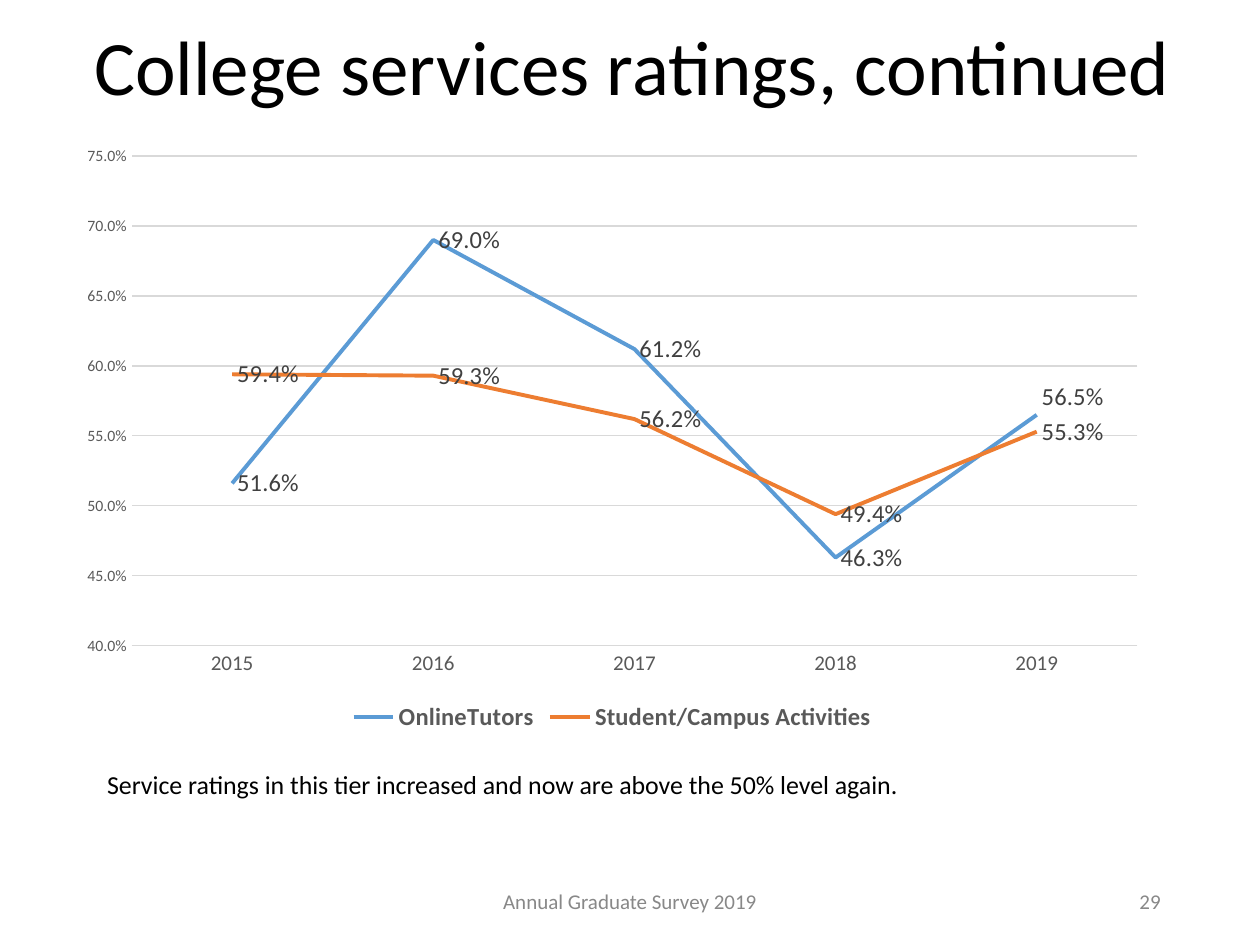
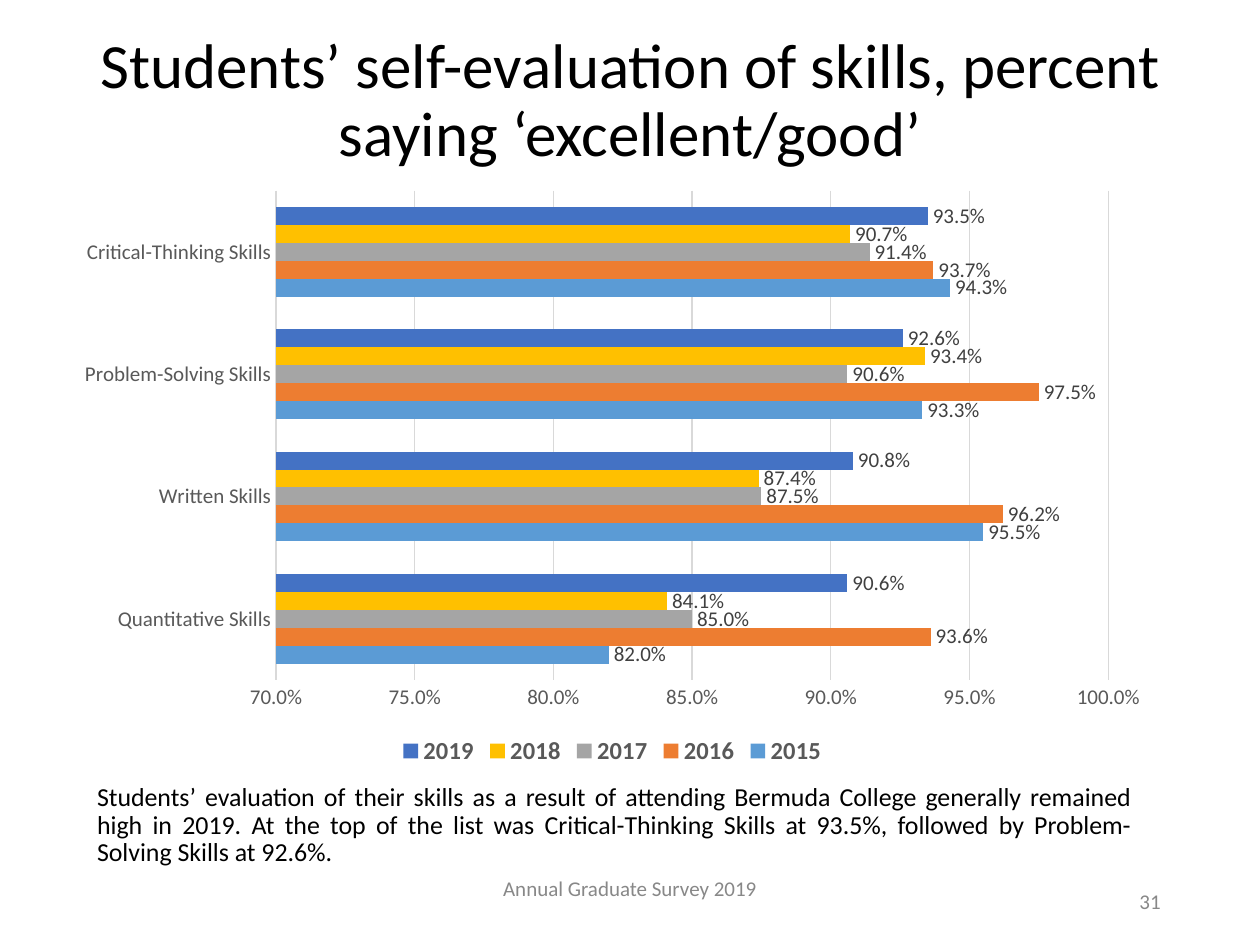
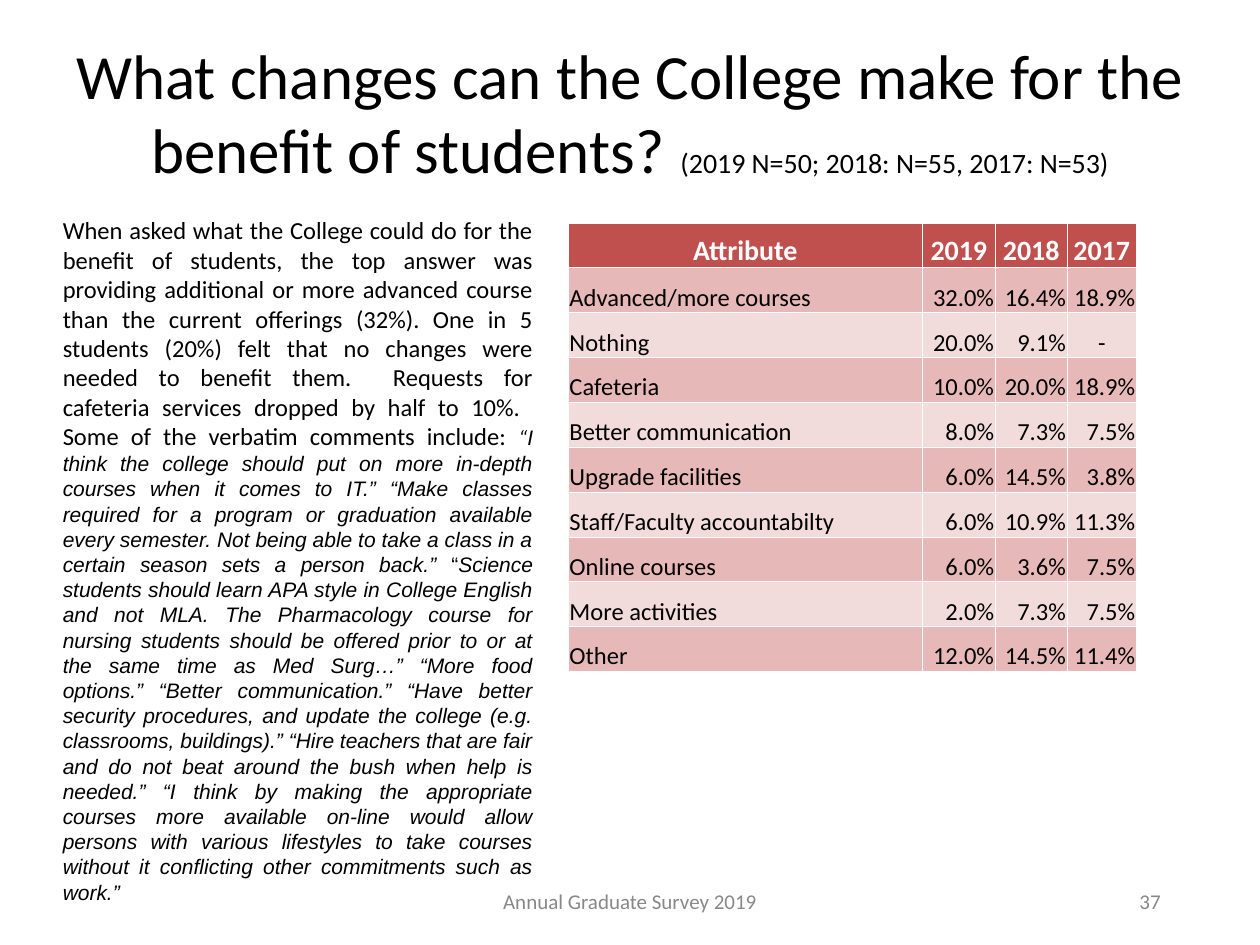
"""Build three slides of the Annual Graduate Survey 2019."""
import dataclasses

import pptx
import pptx.chart.data
import pptx.dml.color
import pptx.enum.chart
import pptx.enum.text
import pptx.oxml
import pptx.oxml.ns
import pptx.util

Inches = pptx.util.Inches
Pt = pptx.util.Pt
Align = pptx.enum.text.PP_ALIGN
Anchor = pptx.enum.text.MSO_ANCHOR
ChartType = pptx.enum.chart.XL_CHART_TYPE
LabelPosition = pptx.enum.chart.XL_LABEL_POSITION


@dataclasses.dataclass(frozen=True)
class Theme:
    """Colours, fonts and type sizes of the deck."""
    font: str = "Calibri"
    quote_font: str = "Arial"
    ink: str = "000000"
    white: str = "FFFFFF"
    footer: str = "888888"
    axis_text: str = "595959"
    label_text: str = "404040"
    grid: str = "D9D9D9"
    header_fill: str = "C0504D"
    bands: tuple = ("E6B8B7", "F2DCDB")
    series: tuple = ("5B9BD5", "ED7D31", "A5A5A5", "FFC000", "4472C4")
    title_size: float = 36
    first_title_size: float = 44
    title_gap_size: float = 39.6
    comment_size: float = 14.8
    header_size: float = 16
    text_size: float = 14
    small_size: float = 12
    scale_size: float = 9


THEME = Theme()
PERCENT = "0.0%"
FOOTER = "Annual Graduate Survey 2019"

RATING_YEARS = ["2015", "2016", "2017", "2018", "2019"]
RATINGS = {
    "OnlineTutors": [0.516, 0.69, 0.612, 0.463, 0.565],
    "Student/Campus Activities": [0.594, 0.593, 0.562, 0.494, 0.553],
}
SKILLS = ["Quantitative Skills", "Written Skills",
          "Problem-Solving Skills", "Critical-Thinking Skills"]
SKILL_SCORES = {
    "2015": [0.82, 0.955, 0.933, 0.943],
    "2016": [0.936, 0.962, 0.975, 0.937],
    "2017": [0.85, 0.875, 0.906, 0.914],
    "2018": [0.841, 0.874, 0.934, 0.907],
    "2019": [0.906, 0.908, 0.926, 0.935],
}
CHANGES = [
    ("Attribute", "2019", "2018", "2017"),
    ("Advanced/more courses", "32.0%", "16.4%", "18.9%"),
    ("Nothing", "20.0%", "9.1%", "-"),
    ("Cafeteria", "10.0%", "20.0%", "18.9%"),
    ("Better communication", "8.0%", "7.3%", "7.5%"),
    ("Upgrade facilities", "6.0%", "14.5%", "3.8%"),
    ("Staff/Faculty accountabilty", "6.0%", "10.9%", "11.3%"),
    ("Online courses", "6.0%", "3.6%", "7.5%"),
    ("More activities", "2.0%", "7.3%", "7.5%"),
    ("Other", "12.0%", "14.5%", "11.4%"),
]
CHANGES_SUMMARY = (
    "When asked what the College could do for the benefit of students, the top answer was "
    "providing additional or more advanced course than the current offerings (32%). One in 5 "
    "students (20%) felt that no changes were needed to benefit them.  Requests for cafeteria "
    "services dropped by half to 10%.  Some of the verbatim comments include: ")
FIRST_COMMENTS = (
    "I think the college should put on more in-depth courses when it comes to IT.” “Make "
    "classes required for a program or graduation available every semester. Not being able to "
    "take a class in a certain season sets a person back.” ")
MORE_COMMENTS = (
    "Science students should learn APA style in College English and not MLA. The Pharmacology "
    "course for nursing students should be offered prior to or at the same time as Med Surg…” "
    "“More food options.” “Better communication.” “Have better security procedures, and update "
    "the college (e.g. classrooms, buildings).” “Hire teachers that are fair and do not beat "
    "around the bush when help is needed.” “I think by making the appropriate courses more "
    "available on-line would allow persons with various lifestyles to take courses without it "
    "conflicting other commitments such as work.”")


def rgb(colour):
    """Turn a hex string into a colour."""
    return pptx.dml.color.RGBColor.from_string(colour)


def style(font, size, colour=THEME.ink, name=THEME.font, bold=False, italic=False):
    """Format a font."""
    font.size, font.name, font.bold, font.italic = Pt(size), name, bold, italic
    font.color.rgb = rgb(colour)


def write(frame, text, size, align=Align.LEFT, anchor=Anchor.TOP, spacing=1.0, **font):
    """Fill a text frame with a string or with (string, format) runs."""
    frame.word_wrap = True
    frame.vertical_anchor = anchor
    paragraph = frame.paragraphs[0]
    paragraph.alignment, paragraph.line_spacing = align, spacing
    paragraph.space_before = Pt(0)
    for words, changes in [(text, {})] if isinstance(text, str) else text:
        run = paragraph.add_run()
        run.text = words
        style(run.font, **{"size": size, **font, **changes})


def place(shape, box):
    """Move a shape to left, top, width, height in inches."""
    shape.left, shape.top, shape.width, shape.height = map(Inches, box)


def add_text(slide, box, text, size, **options):
    """Add a text box."""
    write(slide.shapes.add_textbox(*map(Inches, box)).text_frame, text, size, **options)


def add_slide(deck, layout, title, box, number, size=THEME.title_size, footer_top=6.95):
    """Add a slide with its title, footer and page number."""
    slide = deck.slides.add_slide(deck.slide_layouts.get_by_name(layout))
    heading = slide.shapes.title
    place(heading, box)
    heading.text_frame.auto_size = pptx.enum.text.MSO_AUTO_SIZE.NONE
    write(heading.text_frame, title, size, Align.CENTER, Anchor.MIDDLE, 0.9)
    for left, top, width, text, align in (
            (3.31, footer_top, 3.38, FOOTER, Align.CENTER),
            (7.06, 6.95, 2.25, number, Align.RIGHT)):
        add_text(slide, (left, top, width, 0.4), text, THEME.small_size,
                 align=align, anchor=Anchor.MIDDLE, colour=THEME.footer)
    return slide


def add_comment(slide, box, text):
    """Put an unbulleted comment in the body placeholder."""
    body = slide.placeholders[1]
    place(body, box)
    frame = body.text_frame
    frame.auto_size = pptx.enum.text.MSO_AUTO_SIZE.NONE
    properties = frame.paragraphs[0]._p.get_or_add_pPr()
    properties.set("marL", "0")
    properties.set("indent", "0")
    pptx.oxml.ns.qn("a:buNone")
    properties.append(pptx.oxml.parse_xml(
        f"<a:buNone {pptx.oxml.ns.nsdecls('a')}/>"))
    write(frame, text, THEME.comment_size, Align.JUSTIFY, spacing=0.9)


def format_axes(chart, low, high, scale_size):
    """Format the category axis and the percent scale."""
    for axis, size in ((chart.category_axis, THEME.small_size), (chart.value_axis, scale_size)):
        axis.major_tick_mark = axis.minor_tick_mark = pptx.enum.chart.XL_TICK_MARK.NONE
        style(axis.tick_labels.font, size, THEME.axis_text)
    scale = chart.value_axis
    scale.minimum_scale, scale.maximum_scale, scale.major_unit = low, high, 0.05
    scale.tick_labels.number_format = PERCENT
    scale.tick_labels.number_format_is_linked = False
    scale.format.line.fill.background()
    for line in (chart.category_axis.format.line, scale.major_gridlines.format.line):
        line.color.rgb, line.width = rgb(THEME.grid), Pt(0.75)


def add_percent_chart(slide, kind, box, categories, scores, low, high,
                      scale_size, label_size, label_position):
    """Add a percent chart with value labels and a legend below."""
    data = pptx.chart.data.CategoryChartData(number_format=PERCENT)
    data.categories = categories
    for name, values in scores.items():
        data.add_series(name, values)
    chart = slide.shapes.add_chart(kind, *map(Inches, box), data).chart
    style(chart.font, THEME.small_size)
    chart.has_title = False
    chart.has_legend = True
    chart.legend.position = pptx.enum.chart.XL_LEGEND_POSITION.BOTTOM
    chart.legend.include_in_layout = False
    style(chart.legend.font, THEME.text_size, THEME.axis_text, bold=True)
    format_axes(chart, low, high, scale_size)
    chart.plots[0].vary_by_categories = False
    for series, colour in zip(chart.plots[0].series, THEME.series):
        if kind == ChartType.LINE:
            series.smooth = False
            series.marker.style = pptx.enum.chart.XL_MARKER_STYLE.NONE
            series.format.line.color.rgb, series.format.line.width = rgb(colour), Pt(2.25)
        else:
            series.format.fill.solid()
            series.format.fill.fore_color.rgb = rgb(colour)
        labels = series.data_labels
        labels.show_value, labels.position = True, label_position
        labels.number_format, labels.number_format_is_linked = PERCENT, False
        style(labels.font, label_size, THEME.label_text)
    return chart


def raise_label(chart, series, point, shift):
    """Lift one value label by a share of the chart height."""
    label = chart.plots[0].series[series].points[point].data_label
    style(label.font, THEME.text_size, THEME.label_text)
    label.position = LabelPosition.RIGHT
    chart.element.xpath(".//c:dLbl/c:idx")[0].addnext(pptx.oxml.parse_xml(
        f"<c:layout {pptx.oxml.ns.nsdecls('c')}><c:manualLayout>"
        f'<c:x val="0"/><c:y val="{-shift}"/></c:manualLayout></c:layout>'))


def fill_cell(cell, text, fill, **options):
    """Write a table cell with thin white borders."""
    for side in "LRTB":
        cell._tc.get_or_add_tcPr().append(pptx.oxml.parse_xml(
            f'<a:ln{side} {pptx.oxml.ns.nsdecls("a")} w="{Pt(0.5)}"><a:solidFill>'
            f'<a:srgbClr val="{THEME.white}"/></a:solidFill></a:ln{side}>'))
    cell.fill.solid()
    cell.fill.fore_color.rgb = rgb(fill)
    cell.margin_left = cell.margin_right = cell.margin_top = Inches(0.01)
    cell.margin_bottom = 0
    write(cell.text_frame, text, **options)
    cell.vertical_anchor = Anchor.BOTTOM


def add_changes_table(slide, box, widths, rows):
    """Add a table with a header row and alternating bands."""
    table = slide.shapes.add_table(len(rows), len(widths), *map(Inches, box)).table
    for column, width in zip(table.columns, widths):
        column.width = Inches(width)
    for r, row in enumerate(rows):
        for c, text in enumerate(row):
            if r == 0:
                options = dict(fill=THEME.header_fill, size=THEME.header_size,
                               colour=THEME.white, bold=True, align=Align.CENTER)
            else:
                align = Align.LEFT if c == 0 else Align.CENTER if text == "-" else Align.RIGHT
                options = dict(fill=THEME.bands[(r - 1) % 2], size=THEME.text_size, align=align)
            fill_cell(table.cell(r, c), text, **options)


def build_ratings(deck):
    """Build the slide on service ratings."""
    slide = add_slide(deck, "Title and Content", "College services ratings, continued",
                      (0.52, 0.15, 9, 0.82), "29", THEME.first_title_size)
    add_comment(slide, (0.75, 6.08, 9, 0.77),
                "Service ratings in this tier increased and now are above the 50% level again.")
    chart = add_percent_chart(slide, ChartType.LINE, (0.52, 1.07, 8.68, 4.78), RATING_YEARS,
                              RATINGS, 0.4, 0.75, THEME.scale_size, THEME.text_size,
                              LabelPosition.RIGHT)
    raise_label(chart, 0, 4, 0.03)


def build_skills(deck):
    """Build the slide on self-evaluated skills."""
    slide = add_slide(deck, "Title and Content",
                      "Students’ self-evaluation of skills, percent saying ‘excellent/good’",
                      (0.5, 0.25, 9, 1.12), "31", footer_top=6.85)
    add_comment(slide, (0.67, 6.17, 8.41, 0.73),
                "Students’ evaluation of their skills as a result of attending Bermuda College "
                "generally remained high in 2019. At the top of the list was Critical-Thinking "
                "Skills at 93.5%, followed by Problem-Solving Skills at 92.6%.")
    chart = add_percent_chart(slide, ChartType.BAR_CLUSTERED, (0.5, 1.42, 8.72, 4.7), SKILLS,
                              SKILL_SCORES, 0.7, 1.0, THEME.small_size, THEME.small_size,
                              LabelPosition.OUTSIDE_END)
    chart.plots[0].gap_width = 182


def build_changes(deck):
    """Build the slide on changes that students ask for."""
    title = [("What changes can the College make for the benefit of students?", {}),
             (" ", {"size": THEME.title_gap_size}),
             ("(2019 N=50; 2018: N=55, 2017: N=53)", {"size": THEME.header_size})]
    slide = add_slide(deck, "Title Only", title, (0.5, 0.3, 9, 1.25), "37")
    quote = {"size": THEME.small_size, "name": THEME.quote_font}
    summary = [(CHANGES_SUMMARY, {}),
               ("“", {"size": THEME.small_size, "italic": True}),
               (FIRST_COMMENTS, {**quote, "italic": True}),
               ("“", quote),
               (MORE_COMMENTS, {**quote, "italic": True})]
    add_text(slide, (0.4, 1.66, 3.93, 5.36), summary, THEME.text_size, align=Align.JUSTIFY)
    add_changes_table(slide, (4.51, 1.77, 4.51, 3.56), (2.81, 0.58, 0.57, 0.55), CHANGES)


def main():
    """Build and save the deck."""
    deck = pptx.Presentation()
    deck.slide_width, deck.slide_height = Inches(10), Inches(7.5)
    build_ratings(deck)
    build_skills(deck)
    build_changes(deck)
    deck.save("out.pptx")


if __name__ == "__main__":
    main()
